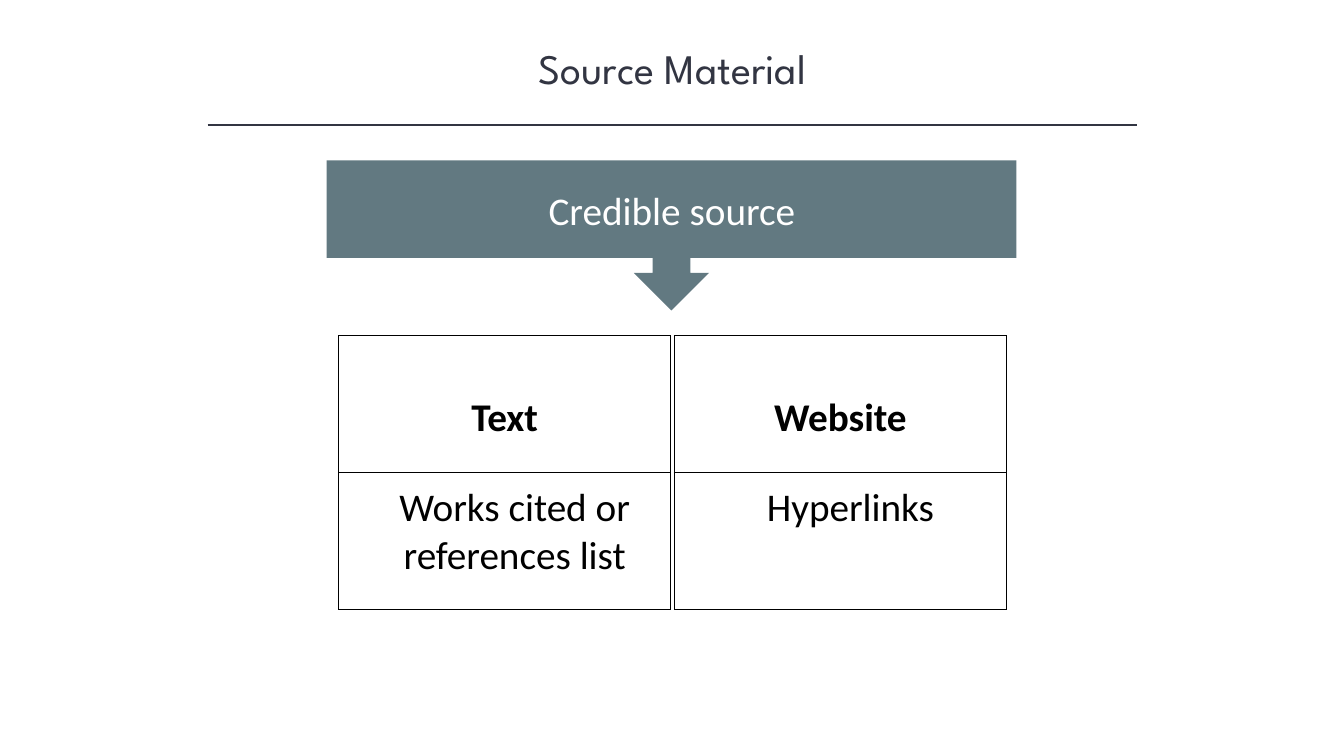
from dataclasses import dataclass

from lxml.etree import SubElement
from pptx import Presentation
from pptx.dml.color import RGBColor
from pptx.enum.shapes import MSO_CONNECTOR as Connector, MSO_SHAPE as Shape
from pptx.enum.text import MSO_ANCHOR as Anchor, MSO_AUTO_SIZE as AutoSize, PP_ALIGN as Align
from pptx.oxml import parse_xml
from pptx.oxml.ns import nsdecls, qn
from pptx.util import Inches, Pt


@dataclass(frozen=True)
class Theme:
    ink: str = "323542"
    slate: str = "627981"
    white: str = "FFFFFF"
    black: str = "000000"
    title_font: str = "League Spartan"
    body_font: str = "Calibri"
    title_size: int = 30
    body_size: int = 28


THEME = Theme()


def write(frame, text, color, font=THEME.body_font, size=THEME.body_size, bold=False):
    """Put one centred run into the frame."""
    para = frame.paragraphs[0]
    para.alignment = Align.CENTER
    span = para.add_run()
    span.text = text
    span.font.name = font
    span.font.size = Pt(size)
    span.font.bold = bold
    span.font.color.rgb = RGBColor.from_string(color)


def place(shape, left, top, width, height):
    shape.left, shape.top = Inches(left), Inches(top)
    shape.width, shape.height = Inches(width), Inches(height)


def add_heading(page, left, top, width, height, text):
    # Title
    title = page.shapes.title
    place(title, left, top, width, height)
    frame = title.text_frame
    frame.word_wrap = True
    frame.auto_size = AutoSize.SHAPE_TO_FIT_TEXT
    frame.vertical_anchor = Anchor.TOP
    write(frame, text, THEME.ink, THEME.title_font, THEME.title_size)

    # Rule below the title
    rule_y = Inches(top + height + 0.26)
    rule = page.shapes.add_connector(
        Connector.STRAIGHT, Inches(left + 0.39), rule_y, Inches(left + width - 0.39), rule_y)
    rule.line.color.rgb = RGBColor.from_string(THEME.ink)
    rule.line.width = Pt(1)
    SubElement(rule.element.spPr, qn("a:effectLst"))


def add_callout(page, left, top, width, height, text):
    # Banner with its down arrow
    banner = page.shapes.add_shape(
        Shape.DOWN_ARROW_CALLOUT, Inches(left), Inches(top), Inches(width), Inches(height))
    # Label inside the banner
    label = page.shapes.add_shape(
        Shape.RECTANGLE, Inches(left + 0.11), Inches(top + 0.21),
        Inches(width - 0.21), Inches(0.57))
    for shape in (banner, label):
        shape.shadow.inherit = False
        shape.fill.solid()
        shape.fill.fore_color.rgb = RGBColor.from_string(THEME.slate)
        shape.line.fill.background()
    frame = label.text_frame
    frame.word_wrap = True
    frame.auto_size = AutoSize.SHAPE_TO_FIT_TEXT
    frame.vertical_anchor = Anchor.TOP
    write(frame, text, THEME.white)


def set_borders(cell):
    props = cell._tc.get_or_add_tcPr()
    for index, side in enumerate(("lnL", "lnR", "lnT", "lnB")):
        props.insert(index, parse_xml(
            f'<a:{side} {nsdecls("a")} w="{Pt(1)}"><a:solidFill>'
            f'<a:srgbClr val="{THEME.black}"/></a:solidFill></a:{side}>'))


def add_card(page, left, top, width, height, text, bold, left_inset, bottom_inset):
    """One-cell table."""
    table = page.shapes.add_table(
        1, 1, Inches(left), Inches(top), Inches(width), Inches(height)).table
    table.first_row = table.horz_banding = False
    cell = table.cell(0, 0)
    cell.fill.background()
    set_borders(cell)
    cell.vertical_anchor = Anchor.BOTTOM
    cell.margin_left, cell.margin_right = Inches(left_inset), Inches(0.1)
    cell.margin_top, cell.margin_bottom = Inches(0.05), Inches(bottom_inset)
    write(cell.text_frame, text, THEME.black, bold=bold)


def add_source_cards(page, left, top, width, height, sources):
    gap = 0.04
    card_width = (width - gap * (len(sources) - 1)) / len(sources)
    card_height = height / 2
    for column, (kind, detail, detail_bottom) in enumerate(sources):
        card_left = left + column * (card_width + gap)
        add_card(page, card_left, top, card_width, card_height, kind, True, 0.1, 0.3)
        add_card(page, card_left, top + card_height, card_width, card_height,
                 detail, False, 0.3, detail_bottom)


def build_source_slide(deck):
    page = deck.slides.add_slide(deck.slide_layouts[5])
    page.background.fill.solid()
    page.background.fill.fore_color.rgb = RGBColor.from_string(THEME.white)
    add_heading(page, 1.67, 0.37, 10, 0.61, "Source Material")
    add_callout(page, 3.24, 1.59, 6.84, 1.49, "Credible source")
    # The one-line detail gets a deeper bottom inset, so first lines align
    add_source_cards(page, 3.36, 3.33, 6.62, 2.72, [
        ("Text", "Works cited or references list", 0.3),
        ("Website", "Hyperlinks", 0.77),
    ])


def main():
    deck = Presentation()
    deck.slide_width, deck.slide_height = Inches(13.33), Inches(7.5)
    build_source_slide(deck)
    deck.save("out.pptx")


if __name__ == "__main__":
    main()
